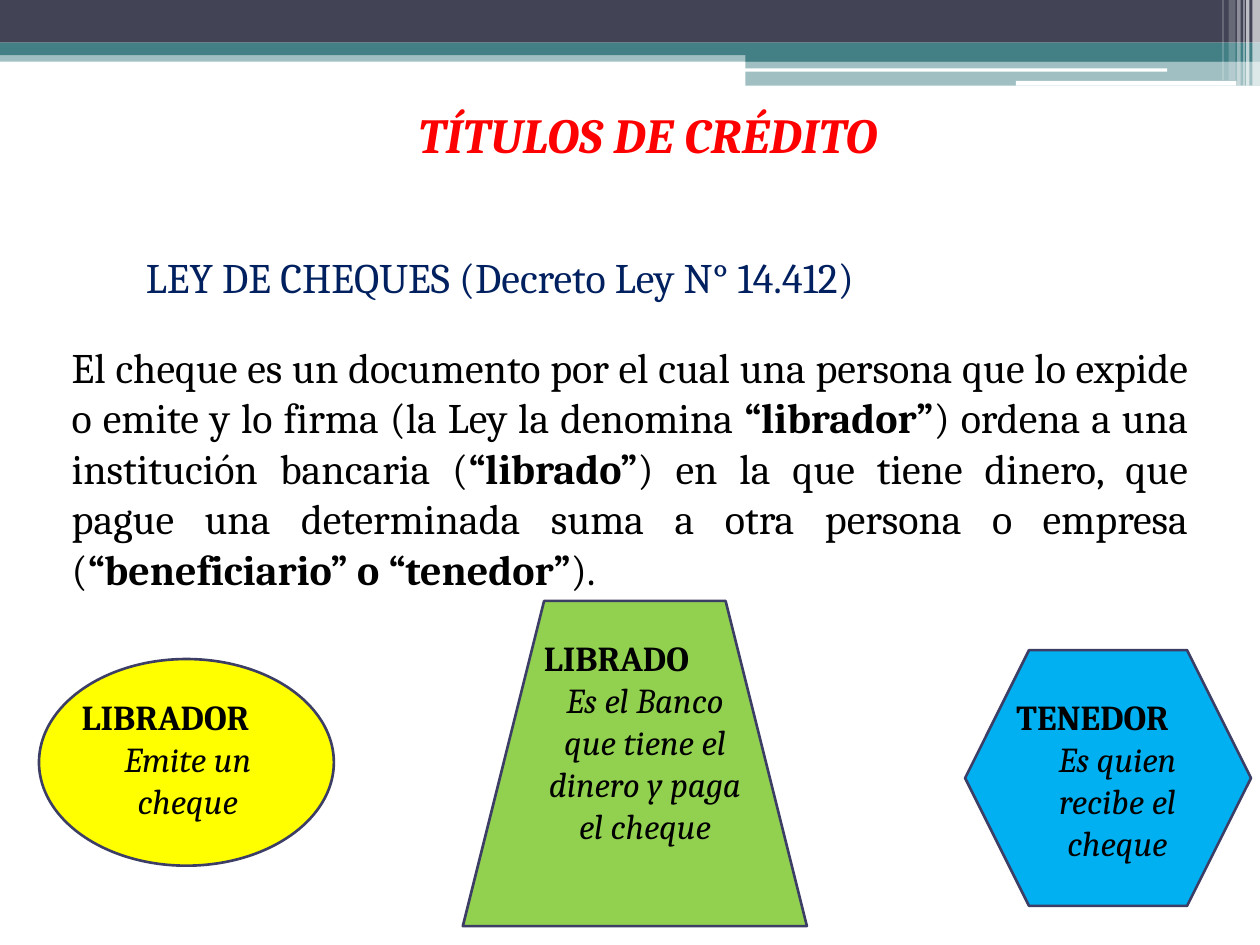
import pptx
import pptx.dml.color
import pptx.enum.shapes
import pptx.enum.text
import pptx.oxml.ns
import pptx.util
from lxml import etree

Pt = pptx.util.Pt
SHAPE = pptx.enum.shapes.MSO_SHAPE
ALIGN = pptx.enum.text.PP_ALIGN
qn = pptx.oxml.ns.qn


def paint(target, color):
    """Give a fill a solid colour, or a font or line its colour."""
    if hasattr(target, "solid"):
        target.solid()
        target = target.fore_color
    else:
        target = target.color
    target.rgb = pptx.dml.color.RGBColor.from_string(color)


def write(box, paras, size, color, wrap=True):
    """Fill a box with (alignment, [(text, font values)]) paragraphs."""
    frame = box.text_frame
    values = dict(word_wrap=wrap, auto_size=pptx.enum.text.MSO_AUTO_SIZE.NONE,
                  vertical_anchor=pptx.enum.text.MSO_ANCHOR.TOP)
    for key, value in values.items():
        setattr(frame, key, value)
    for num, (align, runs) in enumerate(paras):
        para = frame.add_paragraph() if num else frame.paragraphs[0]
        para.alignment = align
        para.space_before = Pt(0)
        for text, style in runs:
            run = para.add_run()
            run.text = text
            for key, value in {"name": "Cambria", "size": Pt(size), **style}.items():
                setattr(run.font, key, value)
            paint(run.font, color)


deck = pptx.Presentation()
deck.slide_width, deck.slide_height = Pt(720), Pt(540)
slide = deck.slides.add_slide(deck.slide_layouts[1])
shapes = slide.shapes

# Header bands: left, top, width, height, colour, opacity in percent
NAVY, TEAL, WHITE = "424456", "438086", "FFFFFF"
bands = [
    (0, 28.8, 720, 6.5, TEAL, 50),
    (0, 0, 720, 24.4, NAVY, 100),
    (0, 24.4, 720, 7.2, TEAL, 100),
    (426, 28, 294, 7.2, TEAL, 100),
    (426, 35, 294, 14, TEAL, 50),
    (425.5, 39, 241.5, 2, WHITE, 100),
    (580.5, 46.2, 126, 2.8, WHITE, 100),
]
stripes = [
    (715.7, 4.3, 49, 65), (712, 2, 49, 65), (710.5, 0.7, 49, 60),
    (707, 2, 49, 40), (702, 4, 46, 20), (698.5, 0.7, 46, 30),
]
bands += [(left, 0, width, height, WHITE, alpha)
          for left, width, height, alpha in stripes]
for left, top, width, height, color, alpha in bands:
    band = shapes.add_shape(SHAPE.RECTANGLE, Pt(left), Pt(top), Pt(width), Pt(height))
    band.shadow.inherit = False
    band.line.fill.background()
    paint(band.fill, color)
    if alpha < 100:
        tone = band.fill._xPr.find(".//" + qn("a:srgbClr"))
        etree.SubElement(tone, qn("a:alpha"), val=str(alpha * 1000))

title = shapes.title
body = slide.placeholders[1]
for box, place in ((title, (194.4, 56.2, 351.4, 41)), (body, (33.8, 191.5, 652.4, 152.6))):
    box.left, box.top, box.width, box.height = map(Pt, place)

BOLD, ITALIC = {"bold": True}, {"italic": True}
write(title, [(ALIGN.CENTER, [("TÍTULOS DE CRÉDITO", {**BOLD, **ITALIC})])],
      28, "FF0000", wrap=False)

write(body, [(ALIGN.JUSTIFY, [
    ("El cheque es un documento por el cual una persona que lo expide o emite "
     "y lo firma (la Ley la denomina ", {}),
    ("“librador”", BOLD),
    (") ordena a una institución bancaria (", {}),
    ("“librado”", BOLD),
    (") en la que tiene dinero, que pague una determinada suma a otra persona "
     "o empresa (", {}),
    ("“beneficiario” o “tenedor”", BOLD),
    (").", {}),
])], 24, "000000")
props = body.text_frame.paragraphs[0]._p.get_or_add_pPr()
props.set("marL", "0")
props.set("indent", "0")
etree.SubElement(props, qn("a:buNone"))

law = shapes.add_textbox(Pt(76.3), Pt(140.4), Pt(544.3), Pt(36))
write(law, [(ALIGN.LEFT, [("LEY DE CHEQUES (Decreto Ley N° 14.412)", {})])], 24, "002060")

# Parties: shape, its place, colour, label place, name, role
parties = [
    (SHAPE.HEXAGON, (551.5, 371.5, 163.4, 146.2), "00B0F0", (573.8, 393.8, 129.6, 104.4),
     "TENEDOR", "Es quien recibe el cheque"),
    (SHAPE.TRAPEZOID, (264.5, 343.4, 196.6, 185.8), "92D050", (303.8, 360, 129.6, 152.6),
     "LIBRADO", "Es el Banco que tiene el dinero y paga el cheque"),
    (SHAPE.OVAL, (22.3, 376.6, 168.5, 118.1), "FFFF00", (39.6, 393.8, 135.4, 80),
     "LIBRADOR", "Emite un cheque"),
]
for kind, place, color, spot, name, role in parties:
    party = shapes.add_shape(kind, *map(Pt, place))
    party.shadow.inherit = False
    paint(party.fill, color)
    paint(party.line, "3D3E66")
    party.line.width = Pt(1.5)
    label = shapes.add_textbox(*map(Pt, spot))
    write(label, [(ALIGN.LEFT, [(name, BOLD)]), (ALIGN.CENTER, [(role, ITALIC)])],
          20, "000000")

deck.save("out.pptx")
